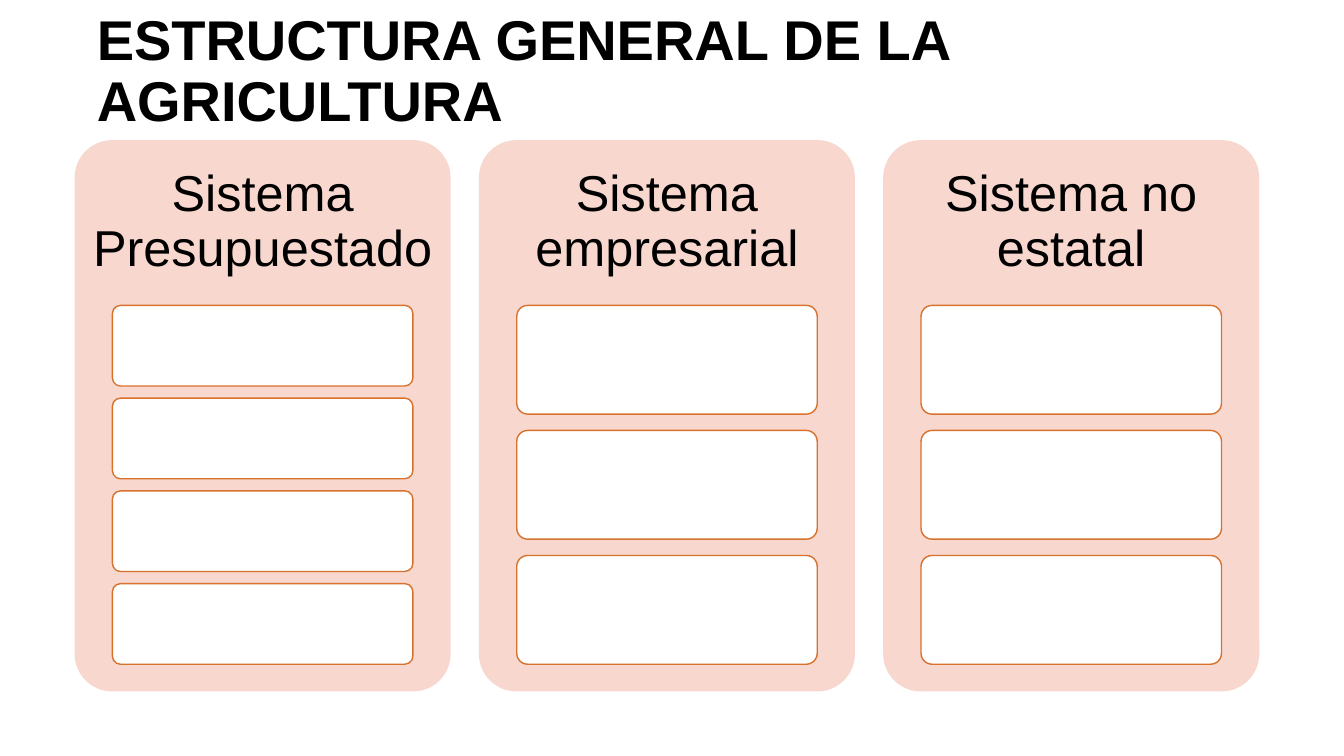
from pptx import Presentation
from pptx import util as u
from pptx.dml.color import RGBColor
from pptx.enum import shapes, text

BLACK = RGBColor(0x00, 0x00, 0x00)
WHITE = RGBColor(0xFF, 0xFF, 0xFF)
PINK = RGBColor(0xF8, 0xD7, 0xCE)
ORANGE = RGBColor(0xD7, 0x71, 0x2C)


class StructureSlide:
    """Draws the parts of the slide in one shared style."""

    font_name = "Arial"
    line_spacing = 0.9
    corner = 0.1

    def __init__(self, deck):
        self.slide = deck.slides.add_slide(deck.slide_layouts[5])

    def set_wording(self, frame, wording, size, align, bold=False):
        frame.word_wrap = True
        frame.auto_size = text.MSO_AUTO_SIZE.NONE
        frame.vertical_anchor = text.MSO_ANCHOR.MIDDLE
        paragraph = frame.paragraphs[0]
        paragraph.alignment = align
        paragraph.line_spacing = self.line_spacing
        run = paragraph.add_run()
        run.text = wording
        run.font.name = self.font_name
        run.font.size = u.Pt(size)
        run.font.bold = bold
        run.font.color.rgb = BLACK

    def title(self, wording, left, top, width, height):
        heading = self.slide.shapes.title
        heading.left, heading.top = u.Inches(left), u.Inches(top)
        heading.width, heading.height = u.Inches(width), u.Inches(height)
        self.set_wording(heading.text_frame, wording, 40, text.PP_ALIGN.LEFT, bold=True)

    def panel(self, left, top, width, height, fill, line=None):
        panel = self.slide.shapes.add_shape(
            shapes.MSO_SHAPE.ROUNDED_RECTANGLE,
            u.Inches(left), u.Inches(top), u.Inches(width), u.Inches(height))
        panel.adjustments[0] = self.corner
        panel.shadow.inherit = False
        panel.fill.solid()
        panel.fill.fore_color.rgb = fill
        if line is None:
            panel.line.fill.background()
        else:
            panel.line.color.rgb = line
            panel.line.width = u.Pt(1)

    def label(self, wording, left, top, width, height):
        frame = self.slide.shapes.add_textbox(
            u.Inches(left), u.Inches(top), u.Inches(width), u.Inches(height)).text_frame
        frame.margin_left = frame.margin_right = u.Inches(0.15)
        frame.margin_top = frame.margin_bottom = u.Inches(0.15)
        self.set_wording(frame, wording, 36, text.PP_ALIGN.CENTER)

    def system(self, wording, box_count, left):
        top, width, height = 1.39, 3.73, 5.47
        label_height, box_width, stack_height = 1.64, 2.98, 3.56
        gap_ratio = 0.15
        self.panel(left, top, width, height, PINK)
        self.label(wording, left, top, width, label_height)
        box_height = stack_height / (box_count + (box_count - 1) * gap_ratio)
        box_left = left + (width - box_width) / 2
        for row in range(box_count):
            box_top = top + label_height + row * box_height * (1 + gap_ratio)
            self.panel(box_left, box_top, box_width, box_height, WHITE, ORANGE)


def main():
    deck = Presentation()
    deck.slide_width, deck.slide_height = u.Inches(13.33), u.Inches(7.5)
    structure = StructureSlide(deck)
    structure.title("ESTRUCTURA GENERAL DE LA AGRICULTURA", 0.86, 0.3, 11.91, 0.85)
    systems = [
        ("Sistema Presupuestado", 4),
        ("Sistema empresarial", 3),
        ("Sistema no estatal", 3),
    ]
    first_left, pitch = 0.74, 4.01
    for column, (wording, box_count) in enumerate(systems):
        structure.system(wording, box_count, first_left + column * pitch)
    deck.save("out.pptx")


if __name__ == "__main__":
    main()
